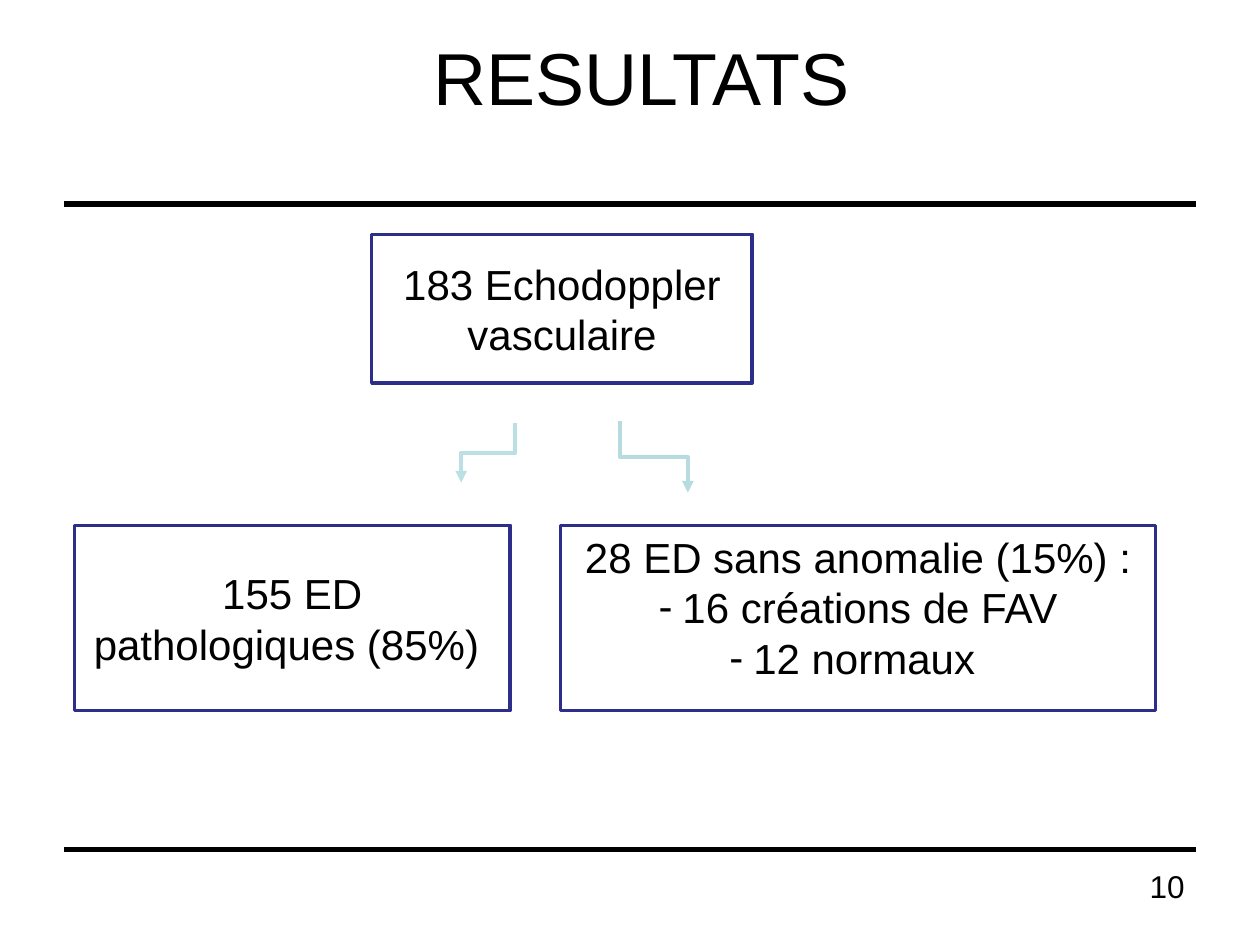
from lxml.etree import SubElement
from pptx import Presentation
from pptx.dml.color import RGBColor
from pptx.enum.shapes import MSO_CONNECTOR as Connector, MSO_SHAPE as Shape
from pptx.enum.text import MSO_ANCHOR as Anchor, PP_ALIGN as Align
from pptx.oxml.ns import qn
from pptx.util import Inches, Pt

BLACK = RGBColor(0x00, 0x00, 0x00)
WHITE = RGBColor(0xFF, 0xFF, 0xFF)
NAVY = RGBColor(0x2D, 0x2D, 0x8A)
PALE_TEAL = RGBColor(0xB6, 0xDC, 0xDF)
LIGHT_TEAL = RGBColor(0xBB, 0xE0, 0xE3)

TITLE = ("RESULTATS", (0.59, -0.02, 9, 1.25))
PAGE_NUMBER = ("10", (7.17, 6.83, 2.33, 0.52))
RULE_LEFT, RULE_RIGHT = 0.51, 9.49
RULE_HEIGHTS = (1.62, 6.74)

# place, anchor, plain paragraphs, dashed paragraphs
BOXES = [
    ((2.95, 1.86, 3.02, 1.18), Anchor.MIDDLE, ["183 Echodoppler vasculaire"], []),
    ((0.59, 4.17, 3.46, 1.47), Anchor.MIDDLE, ["155 ED pathologiques (85%) "], []),
    ((4.45, 4.17, 4.72, 1.47), Anchor.TOP, ["28 ED sans anomalie (15%) :"],
     ["16 créations de FAV", "12 normaux "]),
]

# start, end, colour
BRANCHES = [
    ((4.92, 3.34), (5.46, 3.91), PALE_TEAL),
    ((4.09, 3.36), (3.66, 3.83), LIGHT_TEAL),
]


def inches(values):
    return [Inches(value) for value in values]


def write(frame, lines, size, align, anchor):
    for name, value in {"word_wrap": True, "vertical_anchor": anchor}.items():
        setattr(frame, name, value)
    font_format = {"name": "Arial", "size": Pt(size)}
    for index, line in enumerate(lines):
        paragraph = frame.paragraphs[0] if index == 0 else frame.add_paragraph()
        paragraph.alignment = align
        run = paragraph.add_run()
        run.text = line
        for name, value in font_format.items():
            setattr(run.font, name, value)
        run.font.color.rgb = BLACK


def add_dash(paragraph):
    properties = paragraph._p.get_or_add_pPr()
    properties.set("marL", str(Inches(0.19)))
    properties.set("indent", str(Inches(-0.19)))
    SubElement(properties, qn("a:buFont"), typeface="Arial")
    SubElement(properties, qn("a:buChar"), char="-")


def add_box(slide, place, anchor, lines, dashed):
    box = slide.shapes.add_shape(Shape.RECTANGLE, *inches(place))
    box.shadow.inherit = False
    box.fill.solid()
    box.fill.fore_color.rgb = WHITE
    box.line.color.rgb = NAVY
    box.line.width = Pt(2)
    write(box.text_frame, lines + dashed, 24, Align.CENTER, anchor)
    for paragraph in box.text_frame.paragraphs[len(lines):]:
        add_dash(paragraph)


def add_line(slide, kind, start, end, colour, width):
    line = slide.shapes.add_connector(kind, *inches(start + end))
    line.line.color.rgb = colour
    line.line.width = Pt(width)
    SubElement(line._element.spPr, qn("a:effectLst"))
    return line


def add_branch(slide, start, end, colour):
    """Draw a down-across-down arrow: an elbow turned a quarter about its centre."""
    (x1, y1), (x2, y2) = start, end
    centre_x, centre_y = (x1 + x2) / 2, (y1 + y2) / 2
    half_width, half_height = (y2 - y1) / 2, abs(x2 - x1) / 2
    goes_right = x2 > x1
    side = 1 if goes_right else -1
    branch = add_line(
        slide, Connector.ELBOW,
        (centre_x + side * half_width, centre_y - half_height),
        (centre_x - side * half_width, centre_y + half_height),
        colour, 2.25)
    degrees = 270 if goes_right else 90
    branch._element.spPr.find(qn("a:xfrm")).set("rot", str(degrees * 60000))
    SubElement(branch.line._get_or_add_ln(), qn("a:tailEnd"), type="triangle")


def main():
    deck = Presentation()
    deck.slide_width, deck.slide_height = Inches(10), Inches(7.5)
    slide = deck.slides.add_slide(deck.slide_layouts[5])

    for height in RULE_HEIGHTS:
        add_line(slide, Connector.STRAIGHT, (RULE_LEFT, height),
                 (RULE_RIGHT, height), BLACK, 3)

    text, place = TITLE
    title = slide.shapes.title
    for name, value in zip(("left", "top", "width", "height"), inches(place)):
        setattr(title, name, value)
    write(title.text_frame, [text], 42, Align.CENTER, Anchor.MIDDLE)

    for box in BOXES:
        add_box(slide, *box)
    for branch in BRANCHES:
        add_branch(slide, *branch)

    text, place = PAGE_NUMBER
    page_number = slide.shapes.add_textbox(*inches(place))
    write(page_number.text_frame, [text], 18, Align.RIGHT, Anchor.TOP)

    deck.save("out.pptx")


if __name__ == "__main__":
    main()
